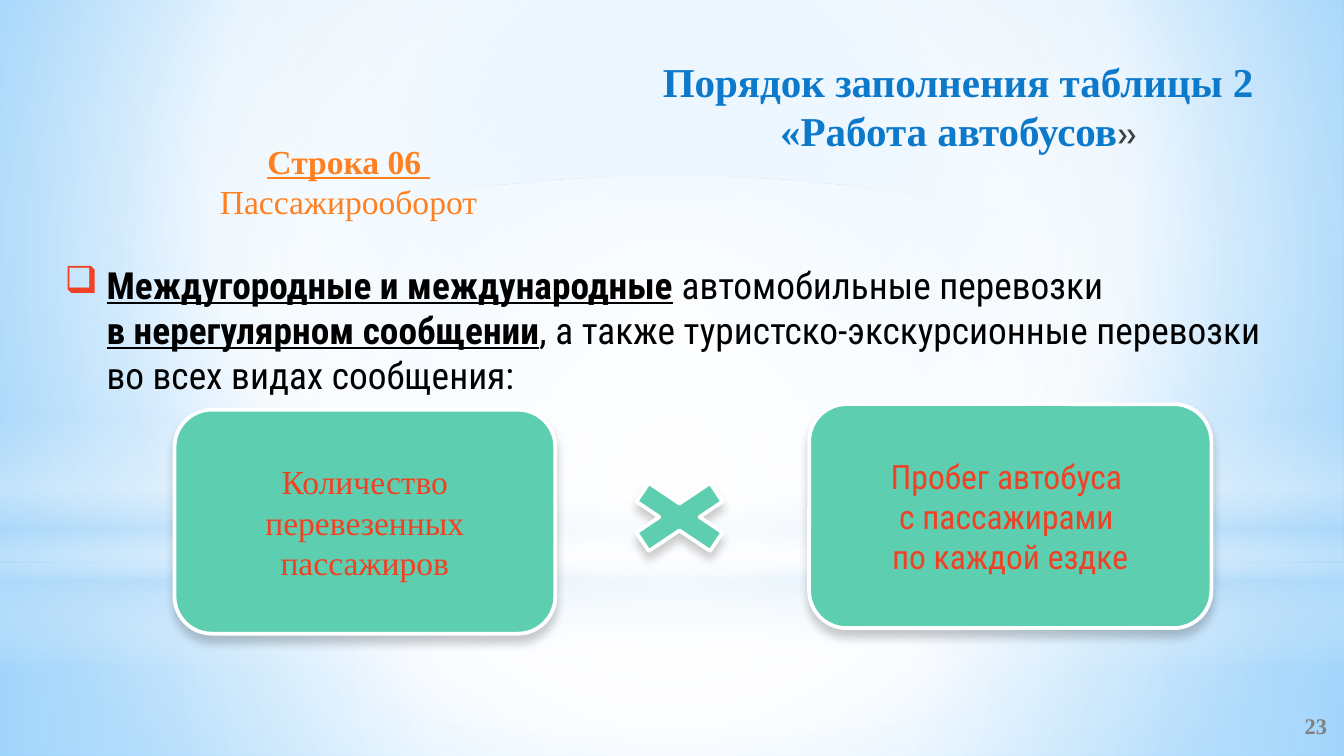
from dataclasses import dataclass

from pptx import Presentation
from pptx.dml.color import RGBColor
from pptx.enum.shapes import MSO_SHAPE
from pptx.enum.text import MSO_ANCHOR, PP_ALIGN
from pptx.oxml import parse_xml
from pptx.oxml.ns import nsdecls
from pptx.util import Pt


@dataclass(frozen=True)
class Theme:
    white: str = "FFFFFF"
    sky: str = "B4DCFA"
    sky_light: str = "9ED5FF"
    sky_deep: str = "5BB9FF"
    blue: str = "0D79CA"
    orange: str = "FF8021"
    red: str = "F14124"
    green: str = "5DCEAF"
    black: str = "000000"
    dark: str = "404040"
    gray: str = "808080"
    serif: str = "Times New Roman"
    condensed: str = "Roboto Condensed"
    sans: str = "Cabin"
    title_size: int = 22
    body_size: int = 20
    label_size: int = 18
    number_size: int = 12


THEME = Theme()
WIDTH, HEIGHT = 720, 405


def gradient(stops, focus=None, angle=0):
    """Gradient fill from (position, colour, opacity) stops, in percent."""
    stop_xml = "".join(
        f'<a:gs pos="{position * 1000}"><a:srgbClr val="{color}">'
        f'<a:alpha val="{opacity * 1000}"/></a:srgbClr></a:gs>'
        for position, color, opacity in stops)
    if focus:
        sides = " ".join(f'{side}="{value * 1000}"' for side, value in zip("ltrb", focus))
        direction = f'<a:path path="circle"><a:fillToRect {sides}/></a:path>'
    else:
        direction = f'<a:lin ang="{angle * 60000}" scaled="0"/>'
    return parse_xml(f'<a:gradFill {nsdecls("a")} rotWithShape="1">'
                     f'<a:gsLst>{stop_xml}</a:gsLst>{direction}</a:gradFill>')


def apply_gradient(owner, fill, element):
    fill.solid()
    solid = owner.xpath("./a:solidFill")[0]
    owner.replace(solid, element)


def add_glow(slide, kind, box, element):
    glow = slide.shapes.add_shape(kind, *map(Pt, box))
    glow.shadow.inherit = False
    glow.line.fill.background()
    apply_gradient(glow.element.spPr, glow.fill, element)


def add_run(paragraph, text, *, font, size, color, bold=False, underline=False):
    for index, line in enumerate(text.split("\n")):
        if index:
            paragraph.add_line_break()
        if line:
            run = paragraph.add_run()
            run.text = line
            run.font.name = font
            run.font.size = Pt(size)
            run.font.bold = bold
            run.font.underline = underline
            run.font.color.rgb = RGBColor.from_string(color)


def add_text(slide, box, align, anchor=MSO_ANCHOR.TOP):
    """Wrapping text box; returns its first paragraph."""
    frame = slide.shapes.add_textbox(*map(Pt, box)).text_frame
    frame.word_wrap = True
    frame.vertical_anchor = anchor
    paragraph = frame.paragraphs[0]
    paragraph.alignment = align
    return paragraph


def add_bullet(paragraph, char, color, indent):
    properties = paragraph._p.get_or_add_pPr()
    properties.set("marL", str(Pt(indent)))
    properties.set("indent", str(-Pt(indent)))
    properties.append(parse_xml(
        f'<a:buClr {nsdecls("a")}><a:srgbClr val="{color}"/></a:buClr>'))
    properties.append(parse_xml(f'<a:buChar {nsdecls("a")} char="{char}"/>'))


def add_factor(slide, kind, box, lines=(), font=THEME.serif):
    """Green raised shape of the formula, with optional paragraphs."""
    factor = slide.shapes.add_shape(kind, *map(Pt, box))
    factor.shadow.inherit = False
    factor.fill.solid()
    factor.fill.fore_color.rgb = RGBColor.from_string(THEME.green)
    factor.line.color.rgb = RGBColor.from_string(THEME.white)
    factor.line.width = Pt(2)
    effects = factor.element.spPr.xpath("./a:effectLst")[0]
    effects.append(parse_xml(
        f'<a:outerShdw {nsdecls("a")} blurRad="{Pt(5)}" dist="{Pt(4)}" dir="5400000" '
        f'rotWithShape="0"><a:srgbClr val="{THEME.black}"><a:alpha val="20000"/>'
        '</a:srgbClr></a:outerShdw>'))
    frame = factor.text_frame
    frame.word_wrap = True
    frame.vertical_anchor = MSO_ANCHOR.MIDDLE
    for index, line in enumerate(lines):
        paragraph = frame.add_paragraph() if index else frame.paragraphs[0]
        paragraph.alignment = PP_ALIGN.CENTER
        add_run(paragraph, line, font=font, size=THEME.label_size, color=THEME.red)


def add_backdrop(slide):
    white, sky = THEME.white, THEME.sky
    center = (50, 50, 50, 50)
    background = slide.background.fill
    background.solid()
    apply_gradient(slide.element.xpath(".//p:bgPr")[0], background, gradient(
        [(0, THEME.sky_light, 100), (60, white, 100), (100, THEME.sky_deep, 100)],
        focus=(20, 10, 20, 60)))
    horizon = 301.5
    add_glow(slide, MSO_SHAPE.RECTANGLE, (0, horizon, WIDTH, HEIGHT - horizon), gradient(
        [(0, white, 91), (37, white, 76), (100, sky, 79)], focus=center))
    add_glow(slide, MSO_SHAPE.RECTANGLE, (0, 0, WIDTH, horizon), gradient(
        [(0, white, 89), (48, white, 62), (100, sky, 79)], focus=center))
    add_glow(slide, MSO_SHAPE.RECTANGLE, (0, 222.75, WIDTH, 135), gradient(
        [(0, white, 0), (29, white, 30), (45, sky, 40),
         (55, white, 26), (65, sky, 60), (100, white, 0)], angle=90))
    add_glow(slide, MSO_SHAPE.OVAL, (0, 94.5, WIDTH, horizon), gradient(
        [(0, white, 100), (56, white, 0)], focus=center))


def main():
    presentation = Presentation()
    presentation.slide_width, presentation.slide_height = Pt(WIDTH), Pt(HEIGHT)
    slide = presentation.slides.add_slide(presentation.slide_layouts[6])
    add_backdrop(slide)

    # Title
    title = add_text(slide, (326, 26.5, 374.5, 60.5), PP_ALIGN.CENTER)
    add_run(title, "Порядок заполнения таблицы 2\n«Работа автобусов", font=THEME.serif,
            size=THEME.title_size, color=THEME.blue, bold=True)
    add_run(title, "»", font=THEME.sans, size=THEME.label_size, color=THEME.dark)

    # Slide number
    number = add_text(slide, (574, 378, 144, 21.5), PP_ALIGN.RIGHT, MSO_ANCHOR.MIDDLE)
    add_run(number, "23", font=THEME.serif, size=THEME.number_size,
            color=THEME.gray, bold=True)

    # Table row heading
    heading = add_text(slide, (96, 72, 181.5, 51), PP_ALIGN.CENTER)
    heading_format = dict(font=THEME.serif, size=THEME.label_size, color=THEME.orange)
    add_run(heading, "Строка 06 ", bold=True, underline=True, **heading_format)
    add_run(heading, "\nПассажирооборот", **heading_format)

    # Kinds of transport
    transport = add_text(slide, (27.5, 137, 669, 80), PP_ALIGN.LEFT)
    add_bullet(transport, "❑", THEME.red, 22.5)
    for text, stressed in (
            ("Междугородные и международные", True),
            (" автомобильные перевозки \n", False),
            ("в нерегулярном сообщении", True),
            (", а также туристско-экскурсионные перевозки во всех видах сообщения:", False)):
        add_run(transport, text, font=THEME.condensed, size=THEME.body_size,
                color=THEME.black, bold=stressed, underline=stressed)

    # Formula: passengers times mileage
    add_factor(slide, MSO_SHAPE.ROUNDED_RECTANGLE, (93.5, 219.5, 204, 120),
               ["Количество перевезенных", "пассажиров"])
    add_factor(slide, MSO_SHAPE.ROUNDED_RECTANGLE, (433.5, 216.5, 215.5, 120),
               ["Пробег автобуса \nс пассажирами \nпо каждой ездке"], font=THEME.condensed)
    add_factor(slide, MSO_SHAPE.MATH_MULTIPLY, (326, 251.5, 76, 51))

    presentation.save("out.pptx")


if __name__ == "__main__":
    main()
